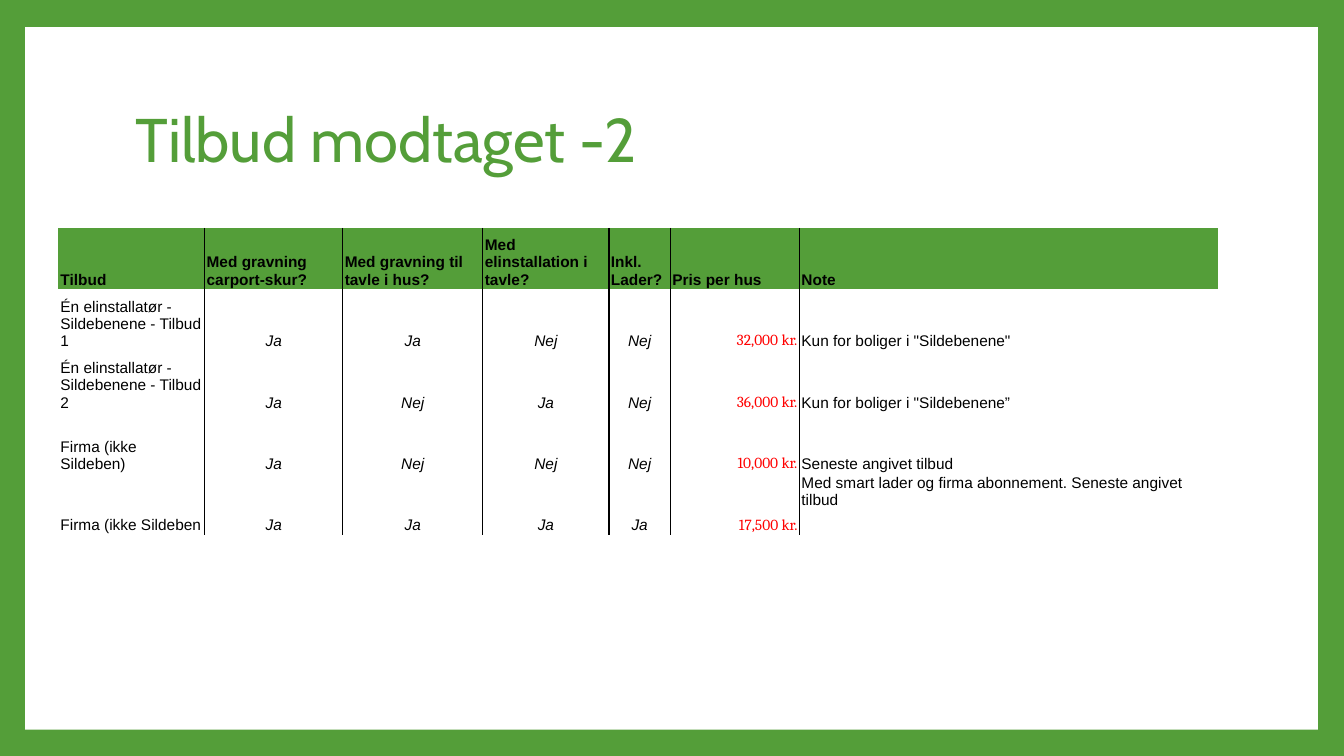
from lxml.etree import SubElement
from pptx import Presentation
from pptx.dml.color import RGBColor
from pptx.enum.shapes import MSO_SHAPE
from pptx.enum.text import MSO_ANCHOR, PP_ALIGN
from pptx.oxml.ns import qn
from pptx.util import Inches, Pt

GREEN, WHITE, BLACK, RED = "549E39", "FFFFFF", "000000", "FF0000"
COL_WIDTHS = [1.45, 1.37, 1.39, 1.25, 0.61, 1.28, 4.15]
ROW_HEIGHT = 0.61
PRICE_COL, NOTE_COL = 5, 6
ROWS = [
    ["Tilbud", "Med gravning carport-skur?", "Med gravning til tavle i hus?",
     "Med elinstallation i tavle?", "Inkl. Lader?", "Pris per hus", "Note"],
    ["Én elinstallatør - Sildebenene - Tilbud 1", "Ja", "Ja", "Nej", "Nej",
     "32,000 kr.", 'Kun for boliger i "Sildebenene"'],
    ["Én elinstallatør - Sildebenene - Tilbud 2", "Ja", "Nej", "Ja", "Nej",
     "36,000 kr.", 'Kun for boliger i "Sildebenene”'],
    ["Firma (ikke Sildeben)", "Ja", "Nej", "Nej", "Nej",
     "10,000 kr.", "Seneste angivet tilbud"],
    ["Firma (ikke Sildeben", "Ja", "Ja", "Ja", "Ja",
     "17,500 kr.", "Med smart lader og firma abonnement. Seneste angivet tilbud"],
]


def paint(target, color):
    """Give a fill one solid colour."""
    target.solid()
    target.fore_color.rgb = RGBColor.from_string(color)


def add_border(cell, side, color=None):
    """Set one cell side to a 1 pt line, or to no line without a colour."""
    ln = SubElement(cell._tc.get_or_add_tcPr(), qn(f"a:ln{side}"), w=str(Pt(1)))
    if color:
        fill = SubElement(ln, qn("a:solidFill"))
        SubElement(fill, qn("a:srgbClr"), val=color)
    else:
        SubElement(ln, qn("a:noFill"))


prs = Presentation()
prs.slide_width, prs.slide_height = Inches(13.33), Inches(7.5)
s = prs.slides.add_slide(prs.slide_layouts[6])
paint(s.background.fill, GREEN)

panel = s.shapes.add_shape(MSO_SHAPE.RECTANGLE, Inches(0.25), Inches(0.27),
                           Inches(12.82), Inches(6.97))
panel.shadow.inherit = False
paint(panel.fill, WHITE)
panel.line.fill.background()

title = s.shapes.add_textbox(Inches(1.25), Inches(0.67), Inches(10.8), Inches(1.48))
tf = title.text_frame
tf.word_wrap = True
tf.vertical_anchor = MSO_ANCHOR.MIDDLE
p = tf.paragraphs[0]
p.line_spacing = 0.9
r = p.add_run()
r.text = "Tilbud modtaget -2"
r.font.name, r.font.size = "Cabin", Pt(44)
paint(r.font.fill, GREEN)

table = s.shapes.add_table(len(ROWS), len(COL_WIDTHS), Inches(0.58), Inches(2.26),
                           Inches(sum(COL_WIDTHS)), Inches(ROW_HEIGHT * len(ROWS))).table
table.first_row = table.horz_banding = False
for column, width in zip(table.columns, COL_WIDTHS):
    column.width = Inches(width)

for i, texts in enumerate(ROWS):
    table.rows[i].height = Inches(ROW_HEIGHT)
    for j, text in enumerate(texts):
        header = i == 0
        price = not header and j == PRICE_COL
        answer = not header and 0 < j < PRICE_COL
        cell = table.cell(i, j)
        cell.margin_left = cell.margin_right = Inches(0.02)
        cell.margin_top = cell.margin_bottom = Inches(0.01)
        long_note = j == NOTE_COL and i == len(ROWS) - 1
        cell.vertical_anchor = MSO_ANCHOR.TOP if long_note else MSO_ANCHOR.BOTTOM
        add_border(cell, "L", BLACK if j > 0 else None)
        add_border(cell, "R", BLACK if j < NOTE_COL else None)
        add_border(cell, "T")
        add_border(cell, "B")
        paint(cell.fill, GREEN if header else WHITE)

        p = cell.text_frame.paragraphs[0]
        p.alignment = (PP_ALIGN.RIGHT if price else
                       PP_ALIGN.CENTER if answer else PP_ALIGN.LEFT)
        r = p.add_run()
        r.text = text
        r.font.name, r.font.size = "Cambria" if price else "Arial", Pt(11)
        r.font.bold, r.font.italic = header, answer
        paint(r.font.fill, RED if price else BLACK)

prs.save("out.pptx")
